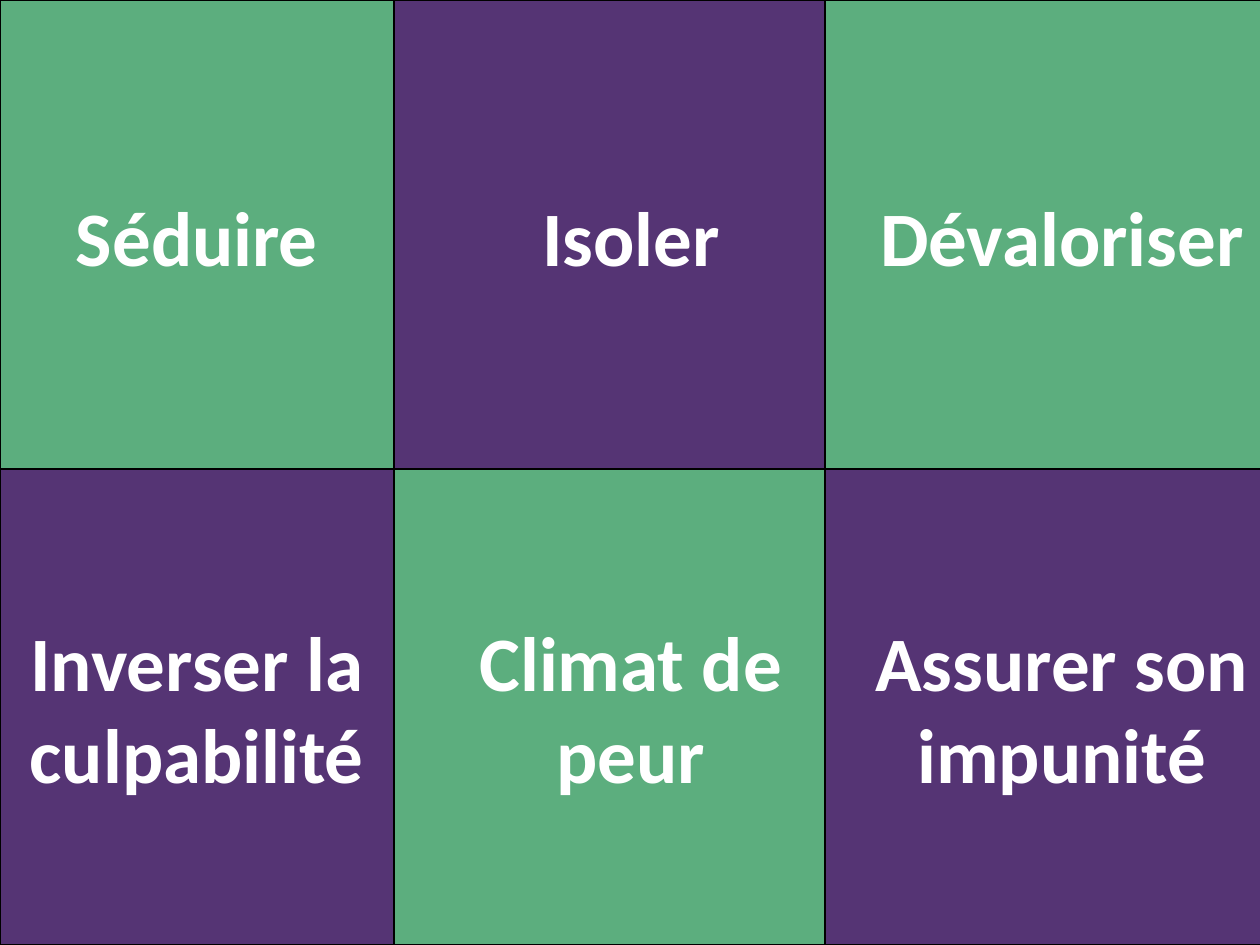
from pptx import Presentation
from pptx.dml.color import RGBColor
from pptx.enum.shapes import MSO_SHAPE
from pptx.enum.text import MSO_ANCHOR, PP_ALIGN
from pptx.util import Pt

RECTANGLE = MSO_SHAPE.RECTANGLE
MIDDLE = MSO_ANCHOR.MIDDLE
CENTER = PP_ALIGN.CENTER

# Content: one list of tiles per row, one string per paragraph
TILES = [
    [["Séduire"], ["Isoler"], ["Dévaloriser"]],
    [["Inverser la culpabilité"], ["Climat de", "peur"], ["Assurer son impunité"]],
]

# Layout in px: (start, size) of each column and row
COLUMNS = [(0, 394), (394, 474), (825, 474)]
ROWS = [(0, 471), (469, 476)]
FILLS = ["5CAE7E", "553474"]


def px(length):
    return round(length * 914400 / 126)


def color(value):
    return RGBColor.from_string(value)


def add_tile(slide, lines, column, row, fill):
    (left, width), (top, height) = column, row
    tile = slide.shapes.add_shape(RECTANGLE, px(left), px(top), px(width), px(height))
    tile.shadow.inherit = False
    tile.fill.solid()
    tile.fill.fore_color.rgb = color(fill)
    tile.line.color.rgb = color("000000")
    tile.line.width = Pt(1)

    frame = tile.text_frame
    frame.word_wrap = True
    frame.vertical_anchor = MIDDLE
    frame.text = "\n".join(lines)
    for paragraph in frame.paragraphs:
        paragraph.alignment = CENTER
        font = paragraph.font
        font.name = "Calibri"
        font.size = Pt(44)
        font.bold = True
        font.color.rgb = color("FFFFFF")


def main():
    deck = Presentation()
    deck.slide_width, deck.slide_height = px(1260), px(945)
    slide = deck.slides.add_slide(deck.slide_layouts[6])

    # Checkerboard of tiles
    for i, (tiles, row) in enumerate(zip(TILES, ROWS)):
        for j, (lines, column) in enumerate(zip(tiles, COLUMNS)):
            add_tile(slide, lines, column, row, FILLS[(i + j) % 2])

    deck.save("out.pptx")


if __name__ == "__main__":
    main()
